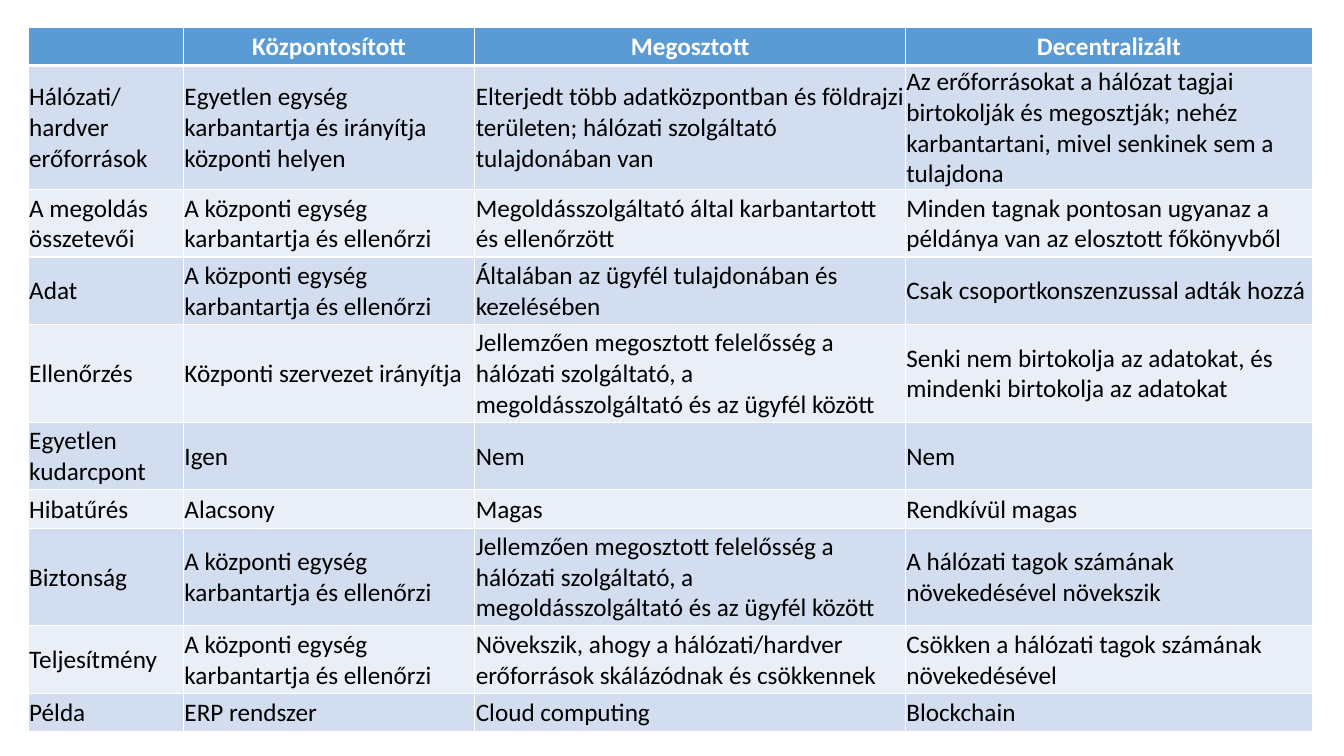
"""Build a slide comparing centralised, distributed and decentralised systems."""
from typing import NamedTuple

from lxml.etree import SubElement as Sub
from pptx import Presentation
from pptx.dml.color import RGBColor as Rgb
from pptx.enum.text import MSO_ANCHOR as Anchor, PP_ALIGN as Align
from pptx.oxml.ns import qn
from pptx.util import Inches, Pt

COLORS = {
    "header": "5B9BD5",
    "odd": "D2DEEF",
    "even": "EAEFF7",
    "white": "FFFFFF",
    "black": "000000",
}
COLUMN_WIDTHS = (1.54, 2.89, 4.27, 4.04)
LINE_HEIGHTS = {1: 0.38, 2: 0.67, 3: 0.97}
RULE, HEADER_RULE = 1, 3

CENTRAL_CONTROL = "A központi egység karbantartja és ellenőrzi"
SHARED_DUTY = (
    "Jellemzően megosztott felelősség a hálózati szolgáltató, "
    "a megoldásszolgáltató és az ügyfél között"
)


class Aspect(NamedTuple):
    """One table row: its height in text lines and its four entries."""

    lines: int
    name: str
    centralised: str
    distributed: str
    decentralised: str


class CellStyle(NamedTuple):
    """Look shared by all cells of a row."""

    fill: str
    text: str
    bold: bool
    align: Align
    top: int
    bottom: int


ASPECTS = (
    Aspect(1, "", "Központosított", "Megosztott", "Decentralizált"),
    Aspect(
        3,
        "Hálózati/hardver erőforrások",
        "Egyetlen egység karbantartja és irányítja központi helyen",
        "Elterjedt több adatközpontban és földrajzi területen; "
        "hálózati szolgáltató tulajdonában van",
        "Az erőforrásokat a hálózat tagjai birtokolják és megosztják; "
        "nehéz karbantartani, mivel senkinek sem a tulajdona",
    ),
    Aspect(
        2,
        "A megoldás összetevői",
        CENTRAL_CONTROL,
        "Megoldásszolgáltató által karbantartott és ellenőrzött",
        "Minden tagnak pontosan ugyanaz a példánya van az elosztott főkönyvből",
    ),
    Aspect(
        2,
        "Adat",
        CENTRAL_CONTROL,
        "Általában az ügyfél tulajdonában és kezelésében",
        "Csak csoportkonszenzussal adták hozzá",
    ),
    Aspect(
        3,
        "Ellenőrzés",
        "Központi szervezet irányítja",
        SHARED_DUTY,
        "Senki nem birtokolja az adatokat, és mindenki birtokolja az adatokat",
    ),
    Aspect(2, "Egyetlen kudarcpont", "Igen", "Nem", "Nem"),
    Aspect(1, "Hibatűrés", "Alacsony", "Magas", "Rendkívül magas"),
    Aspect(
        3,
        "Biztonság",
        CENTRAL_CONTROL,
        SHARED_DUTY,
        "A hálózati tagok számának növekedésével növekszik",
    ),
    Aspect(
        2,
        "Teljesítmény",
        CENTRAL_CONTROL,
        "Növekszik, ahogy a hálózati/hardver erőforrások skálázódnak és csökkennek",
        "Csökken a hálózati tagok számának növekedésével",
    ),
    Aspect(1, "Példa", "ERP rendszer", "Cloud computing", "Blockchain"),
)


def style_for(index: int) -> CellStyle:
    """Choose the cell style from the row index."""
    if index == 0:
        return CellStyle("header", "white", True, Align.CENTER, RULE, HEADER_RULE)
    band = "odd" if index % 2 else "even"
    top = HEADER_RULE if index == 1 else RULE
    return CellStyle(band, "black", False, Align.LEFT, top, RULE)


def draw_borders(cell, style: CellStyle) -> None:
    """Draw white rules on the four sides of a cell."""
    properties = cell._tc.get_or_add_tcPr()
    widths = {"L": RULE, "R": RULE, "T": style.top, "B": style.bottom}
    for side, width in widths.items():
        rule = Sub(properties, qn(f"a:ln{side}"), w=str(Pt(width)))
        Sub(Sub(rule, qn("a:solidFill")), qn("a:srgbClr"), val=COLORS["white"])


def fill_cell(cell, entry: str, style: CellStyle) -> None:
    """Write and format one cell."""
    draw_borders(cell, style)
    cell.fill.solid()
    cell.fill.fore_color.rgb = Rgb.from_string(COLORS[style.fill])
    cell.vertical_anchor = Anchor.MIDDLE
    cell.margin_left = cell.margin_right = cell.margin_top = Inches(0.01)
    cell.margin_bottom = 0
    cell.text_frame.text = entry
    paragraph = cell.text_frame.paragraphs[0]
    paragraph.alignment = style.align
    for run in paragraph.runs:
        run.font.name = "Calibri"
        run.font.size = Pt(18)
        run.font.bold = style.bold
        run.font.color.rgb = Rgb.from_string(COLORS[style.text])


def draw_comparison(slide) -> None:
    """Add the comparison table."""
    height = Inches(6.97)
    frame = slide.shapes.add_table(
        len(ASPECTS), len(COLUMN_WIDTHS),
        Inches(0.28), Inches(0.27), Inches(12.74), height,
    )
    comparison = frame.table
    for column, width in zip(comparison.columns, COLUMN_WIDTHS):
        column.width = Inches(width)
    for index, (row, aspect) in enumerate(zip(comparison.rows, ASPECTS)):
        row.height = Inches(LINE_HEIGHTS[aspect.lines])
        for cell, entry in zip(row.cells, aspect[1:]):
            fill_cell(cell, entry, style_for(index))
    frame.height = height


def main() -> None:
    """Create and save the presentation."""
    deck = Presentation()
    deck.slide_width, deck.slide_height = Inches(13.33), Inches(7.5)
    draw_comparison(deck.slides.add_slide(deck.slide_layouts[6]))
    deck.save("out.pptx")


if __name__ == "__main__":
    main()
